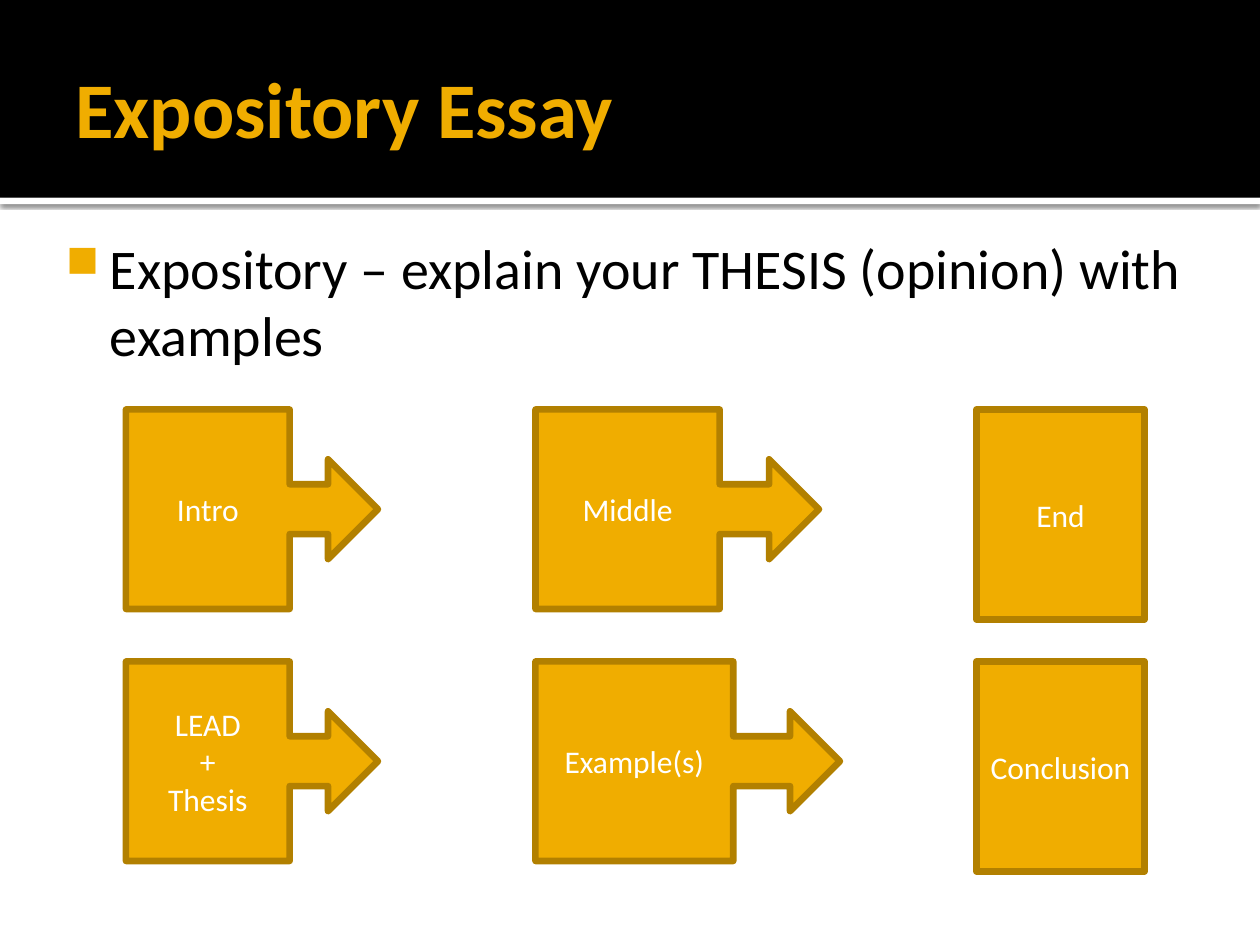
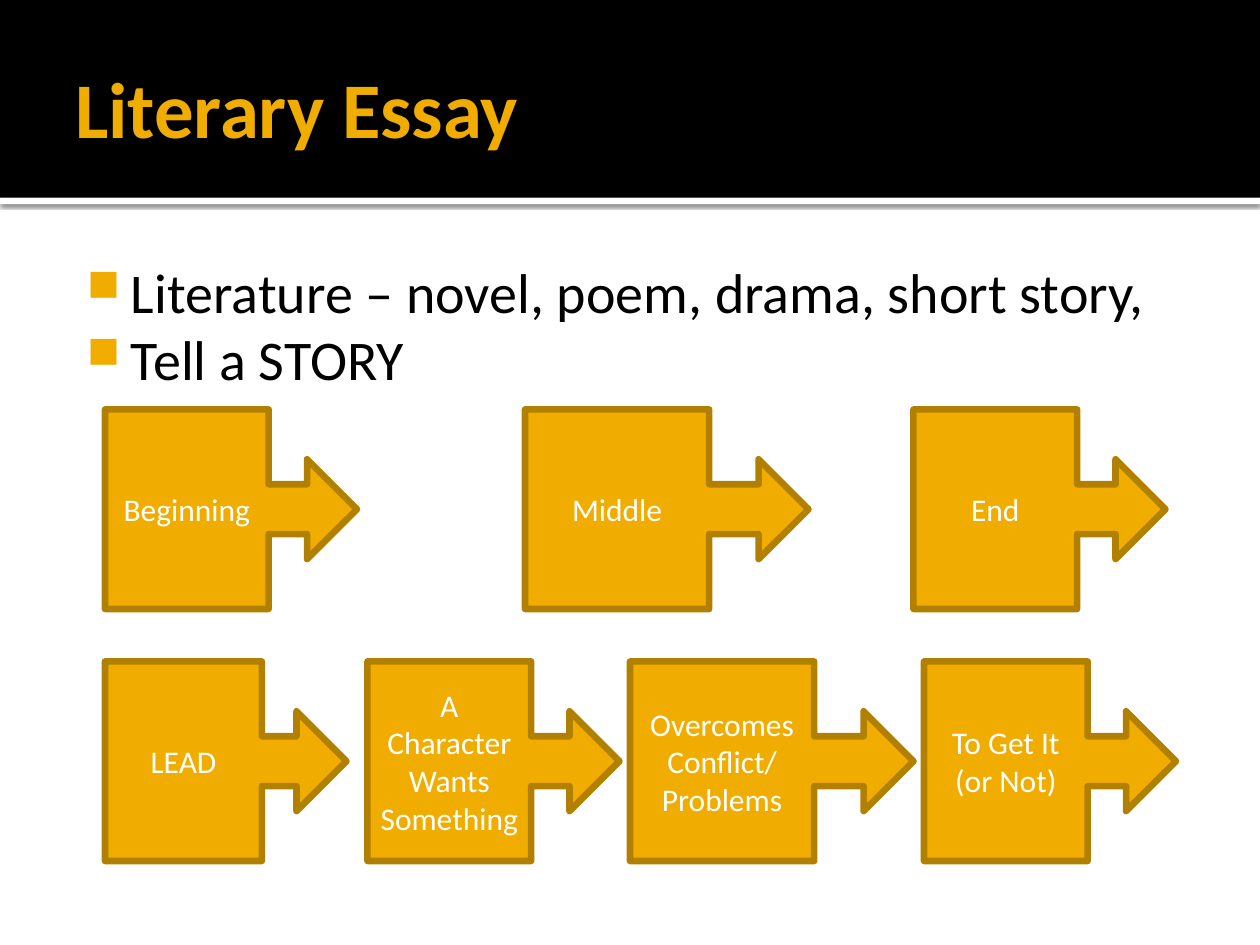
from lxml.etree import SubElement
from pptx import Presentation
from pptx.dml.color import RGBColor
from pptx.enum.shapes import MSO_SHAPE as Shape
from pptx.enum.text import MSO_ANCHOR as Anchor, PP_ALIGN as Align
from pptx.oxml.ns import qn
from pptx.util import Inches, Pt

COLORS = {
    "paper": "FFFFFF",
    "ink": "000000",
    "gold": "F0AD00",
    "edge": "B28000",
}
FONT = "Calibri"
COLS, ROWS = 120, 90
BAND_ROWS, STRIPE_ROWS = 18.84, 0.6
STEP_ROWS, STEP_HEIGHT, BOX_HEIGHT = (39, 63), 19, 20


def rgb(name):
    return RGBColor.from_string(COLORS[name])


def add_xml(parent, tag, **attrs):
    return SubElement(parent, qn(tag), {k: str(v) for k, v in attrs.items()})


def write(tf, text, size=18, color="paper", bold=False, align=Align.LEFT,
          anchor=Anchor.MIDDLE, insets=(0.1, 0.05, 0.1, 0.05), bullet=None):
    tf.word_wrap = True
    tf.vertical_anchor = anchor
    tf.margin_left, tf.margin_top, tf.margin_right, tf.margin_bottom = map(Inches, insets)
    for i, line in enumerate(text.split("\n")):
        p = tf.paragraphs[0] if i == 0 else tf.add_paragraph()
        p.alignment = align
        r = p.add_run()
        r.text = line
        r.font.name, r.font.size, r.font.bold = FONT, Pt(size), bold
        r.font.color.rgb = rgb(color)
        if bullet:
            pPr = p._p.get_or_add_pPr()
            pPr.set("marL", str(Inches(0.48)))
            pPr.set("indent", str(Inches(-0.35)))
            add_xml(add_xml(pPr, "a:buClr"), "a:srgbClr", val=COLORS["gold"])
            add_xml(pPr, "a:buSzPct", val=80000)
            add_xml(pPr, "a:buChar", char=bullet)


class Deck:
    def __init__(self):
        self.prs = Presentation()
        self.prs.slide_width, self.prs.slide_height = Inches(10), Inches(7.5)
        self.slide = None

    def grid(self, col, row, cols, rows):
        dx, dy = self.prs.slide_width / COLS, self.prs.slide_height / ROWS
        return [round(v) for v in (col * dx, row * dy, cols * dx, rows * dy)]

    def shape(self, kind, at, fill, line=None):
        sp = self.slide.shapes.add_shape(kind, *self.grid(*at))
        sp.shadow.inherit = False
        sp.fill.solid()
        sp.fill.fore_color.rgb = rgb(fill)
        if line:
            sp.line.color.rgb = rgb(line)
            sp.line.width = Pt(3.78)
        else:
            sp.line.fill.background()
        return sp

    def text(self, at, text, **fmt):
        write(self.slide.shapes.add_textbox(*self.grid(*at)).text_frame, text, **fmt)

    def new_slide(self, title):
        self.slide = self.prs.slides.add_slide(self.prs.slide_layouts[6])
        self.slide.background.fill.solid()
        self.slide.background.fill.fore_color.rgb = rgb("paper")
        stripe = self.shape(Shape.RECTANGLE, (0, BAND_ROWS, COLS, STRIPE_ROWS), "paper")
        effects = stripe._element.spPr.find(qn("a:effectLst"))
        shadow = add_xml(effects, "a:outerShdw", blurRad=Pt(2.5), dist=Pt(0.8),
                         dir=90 * 60000, algn="tl", rotWithShape=0)
        add_xml(add_xml(shadow, "a:srgbClr", val=COLORS["ink"]), "a:alpha", val=60000)
        self.shape(Shape.RECTANGLE, (0, 0, COLS, BAND_ROWS), "ink")
        self.text((6, 2, 108, 16.44), title, size=45, color="gold", bold=True,
                  insets=(0.1, 0.05, 0.05, 0.05))

    def bullets(self, at, text):
        self.text(at, text, size=32, color="ink", anchor=Anchor.TOP,
                  insets=(0.06, 0.1, 0.1, 0.05), bullet="■")

    def step(self, kind, at, text):
        sp = self.shape(kind, at, "gold", "edge")
        write(sp.text_frame, text, align=Align.CENTER)

    def callouts(self, row, steps):
        for col, cols, text in steps:
            self.step(Shape.RIGHT_ARROW_CALLOUT, (col, row, cols, STEP_HEIGHT), text)

    def end_box(self, row, text):
        self.step(Shape.RECTANGLE, (93, row, 16, BOX_HEIGHT), text)


def expository(deck):
    deck.new_slide("Expository Essay")
    deck.bullets((4, 21, 114, 59.4),
                 "Expository – explain your THESIS (opinion) with examples")
    rows = [
        ([(12, 24, "Intro"), (51, 27, "Middle")], "End"),
        ([(12, 24, "LEAD\n+\nThesis"), (51, 29, "Example(s)")], "Conclusion"),
    ]
    for row, (steps, ending) in zip(STEP_ROWS, rows):
        deck.callouts(row, steps)
        deck.end_box(row, ending)


def literary(deck):
    deck.new_slide("Literary Essay")
    deck.bullets((6, 23.28, 108, 60.72),
                 "Literature – novel, poem, drama, short story,\nTell a STORY")
    rows = [
        [(10, 24, "Beginning"), (50, 27, "Middle"), (87, 24, "End")],
        [(10, 23, "LEAD"), (35, 24, "A Character Wants Something"),
         (60, 27, "Overcomes Conflict/\nProblems"), (88, 24, "To Get It (or Not)")],
    ]
    for row, steps in zip(STEP_ROWS, rows):
        deck.callouts(row, steps)


def main():
    deck = Deck()
    expository(deck)
    literary(deck)
    deck.prs.save("out.pptx")


if __name__ == "__main__":
    main()
